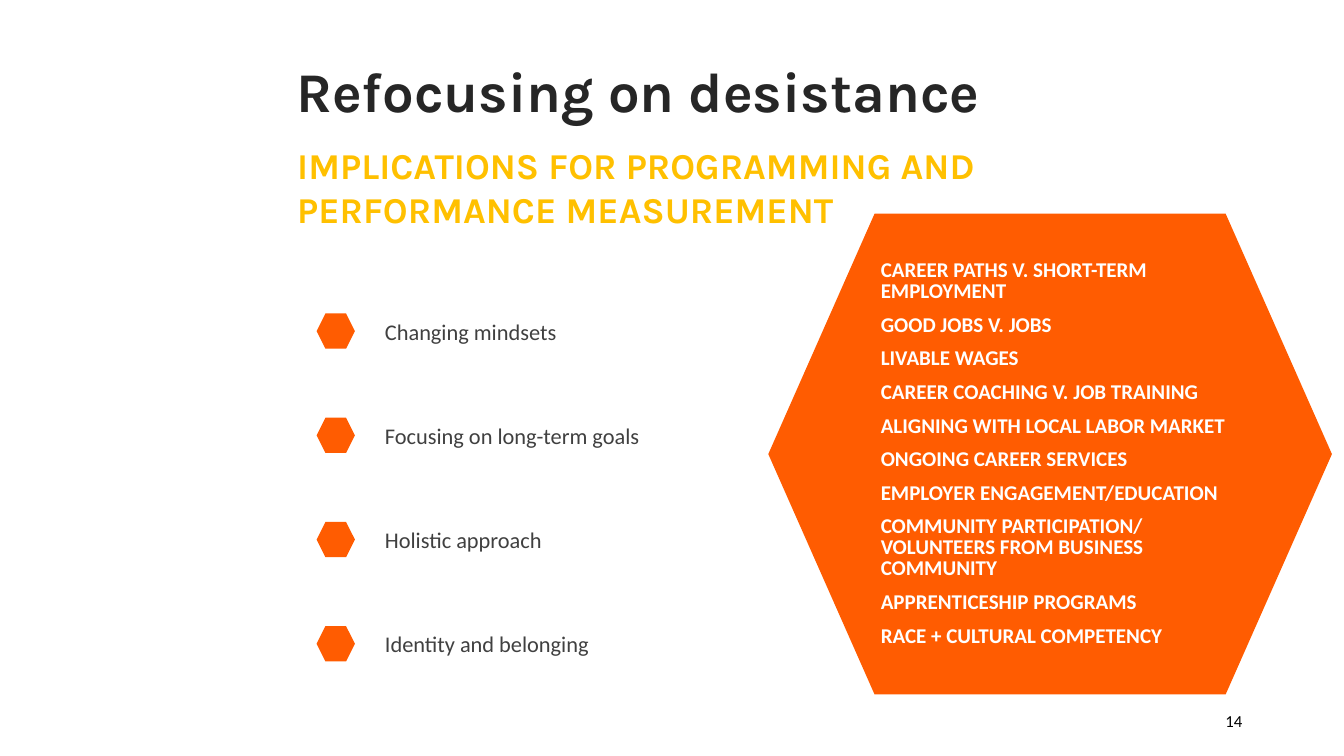
import pptx
import pptx.util
import pptx.dml.color
import pptx.enum.shapes
import pptx.enum.text

Inches, Pt = pptx.util.Inches, pptx.util.Pt
ALIGN = pptx.enum.text.PP_ALIGN
ANCHOR = pptx.enum.text.MSO_ANCHOR
FIT = pptx.enum.text.MSO_AUTO_SIZE
ORANGE = "FF5C01"

deck = pptx.Presentation()
deck.slide_width, deck.slide_height = Inches(13.33), Inches(7.5)
slide = deck.slides.add_slide(deck.slide_layouts[6])


def add_hex(left, top, width, height, adj):
    kind = pptx.enum.shapes.MSO_SHAPE.HEXAGON
    shape = slide.shapes.add_shape(
        kind, Inches(left), Inches(top), Inches(width), Inches(height))
    shape.adjustments[0] = adj
    shape.shadow.inherit = False
    shape.fill.solid()
    shape.fill.fore_color.rgb = pptx.dml.color.RGBColor.from_string(ORANGE)
    shape.line.fill.background()
    return shape


def write(shape, lines, color, font, frame={}, para={}):
    """Fill a shape with one paragraph per line, formatted from dicts."""
    body = shape.text_frame
    body.text = "\n".join(lines)
    for name, value in ({"word_wrap": True} | frame).items():
        setattr(body, name, value)
    for item in body.paragraphs:
        for name, value in ({"alignment": ALIGN.LEFT} | para).items():
            setattr(item, name, value)
        for name, value in font.items():
            setattr(item.font, name, value)
        item.font.color.rgb = pptx.dml.color.RGBColor.from_string(color)


# Programming panel
topics = [
    "CAREER PATHS V. SHORT-TERM EMPLOYMENT",
    "GOOD JOBS V. JOBS",
    "LIVABLE WAGES",
    "CAREER COACHING V. JOB TRAINING",
    "ALIGNING WITH LOCAL LABOR MARKET",
    "ONGOING CAREER SERVICES",
    "EMPLOYER ENGAGEMENT/EDUCATION",
    "COMMUNITY PARTICIPATION/ VOLUNTEERS FROM BUSINESS COMMUNITY",
    "APPRENTICESHIP PROGRAMS",
    "RACE + CULTURAL COMPETENCY",
]
panel = add_hex(7.62, 2.12, 5.59, 4.77, 0.221)
write(panel, topics, "FFFFFF",
      {"name": "Calibri", "size": Pt(15), "bold": True},
      {"vertical_anchor": ANCHOR.MIDDLE},
      {"line_spacing": Pt(15), "space_after": Pt(9)})
for item in panel.text_frame.paragraphs:
    props = item._p.get_or_add_pPr()
    props.set("marL", str(Inches(0.2)))
    props.set("indent", "0")

# Headings, page number and the four shifts
grow = {"auto_size": FIT.SHAPE_TO_FIT_TEXT}
middle = {"vertical_anchor": ANCHOR.MIDDLE}
head = {"name": "Karla", "bold": True}
plain = {"name": "Calibri"}
texts = [
    ("Refocusing on desistance", (2.84, 0.51, 9.88, 0.77), "262626",
     head | {"size": Pt(40)}, grow, {}),
    ("IMPLICATIONS FOR PROGRAMMING AND PERFORMANCE MEASUREMENT",
     (2.85, 1.37, 8.24, 0.98), "FFC000", head | {"size": Pt(26)}, grow, {}),
    ("14", (9.42, 6.95, 3, 0.4), "000000", plain | {"size": Pt(12)},
     middle, {"alignment": ALIGN.RIGHT}),
]
shifts = ["Changing mindsets", "Focusing on long-term goals",
          "Holistic approach", "Identity and belonging"]
for row, shift in enumerate(shifts):
    top = 3.1 + row * 1.034
    add_hex(3.14, top + 0.01, 0.38, 0.35, 0.25)
    texts.append((shift, (3.72, top, 6.7, 0.37), "404040",
                  plain | {"size": Pt(16)}, grow | middle, {}))

for text, place, color, font, frame, para in texts:
    box = slide.shapes.add_textbox(*map(Inches, place))
    write(box, [text], color, font, frame, para)

deck.save("out.pptx")
